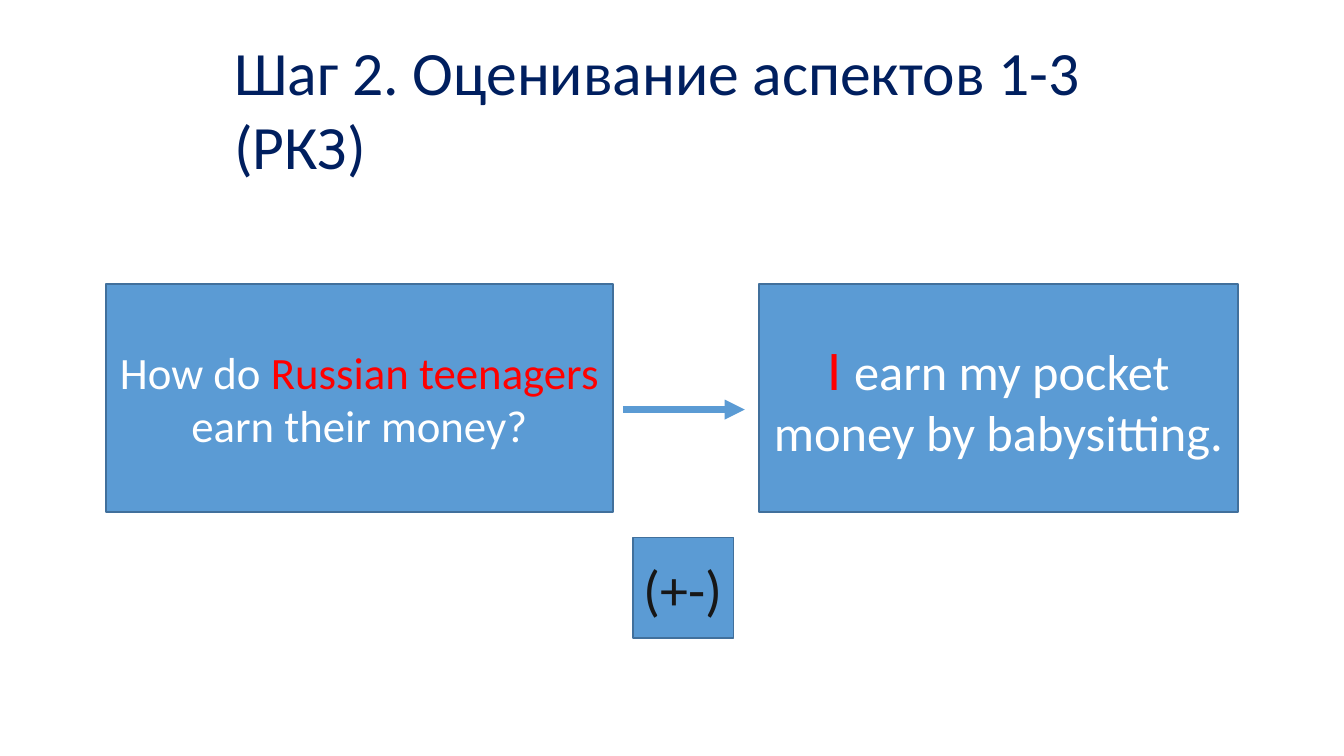
from lxml import etree
from pptx import Presentation
from pptx.dml.color import RGBColor
from pptx.enum.shapes import MSO_CONNECTOR, MSO_SHAPE
from pptx.enum.text import MSO_ANCHOR, MSO_AUTO_SIZE, PP_ALIGN
from pptx.oxml.ns import qn
from pptx.util import Cm, Pt

NAVY = RGBColor(0x00, 0x1F, 0x5F)
BLUE = RGBColor(0x5B, 0x9B, 0xD4)
BORDER = RGBColor(0x41, 0x70, 0x9C)
WHITE = RGBColor(0xFF, 0xFF, 0xFF)
RED = RGBColor(0xFF, 0x00, 0x00)
BLACK = RGBColor(0x17, 0x17, 0x17)

RECTANGLE = MSO_SHAPE.RECTANGLE
STRAIGHT = MSO_CONNECTOR.STRAIGHT
TOP, MIDDLE = MSO_ANCHOR.TOP, MSO_ANCHOR.MIDDLE
LEFT, CENTER = PP_ALIGN.LEFT, PP_ALIGN.CENTER
NO_FIT = MSO_AUTO_SIZE.NONE

QUESTION = [("How do ", 32, WHITE), ("Russian teenagers ", 32, RED),
            ("earn their money?", 32, WHITE)]
ANSWER = [("I ", 40, RED), ("earn my pocket money by babysitting.", 36, WHITE)]
MARK = [("(+-)", 40, BLACK)]
HEADING = [("Шаг 2. Оценивание аспектов 1-3 (РКЗ)", 44, NAVY)]


def apply(target, values):
    for name, value in values.items():
        setattr(target, name, value)


def write(frame, pieces, align, anchor, indent=0):
    """Fill a text frame with one paragraph of coloured pieces."""
    apply(frame, {"word_wrap": True, "auto_size": NO_FIT,
                  "vertical_anchor": anchor, "margin_left": Cm(indent),
                  "margin_right": 0, "margin_top": 0, "margin_bottom": 0})
    paragraph = frame.paragraphs[0]
    apply(paragraph, {"alignment": align, "line_spacing": 1.0})
    for text, size, color in pieces:
        run = paragraph.add_run()
        run.text = text
        apply(run.font, {"name": "Calibri", "size": Pt(size)})
        run.font.color.rgb = color


def add_heading(slide, left, top, width, height):
    heading = slide.shapes.title
    apply(heading, {"left": Cm(left), "top": Cm(top),
                    "width": Cm(width), "height": Cm(height)})
    write(heading.text_frame, HEADING, LEFT, TOP, indent=2.72)


def add_card(slide, left, top, width, height, pieces):
    card = slide.shapes.add_shape(
        RECTANGLE, Cm(left), Cm(top), Cm(width), Cm(height))
    card.shadow.inherit = False
    card.fill.solid()
    card.fill.fore_color.rgb = BLUE
    card.line.color.rgb = BORDER
    card.line.width = Pt(0.96)
    write(card.text_frame, pieces, CENTER, MIDDLE)


def add_arrow(slide, start, end, y):
    arrow = slide.shapes.add_connector(
        STRAIGHT, Cm(start), Cm(y), Cm(end), Cm(y))
    arrow.line.color.rgb = BLUE
    arrow.line.width = Pt(4.8)
    # Arrowhead, and no shadow
    etree.SubElement(arrow.line._get_or_add_ln(), qn("a:tailEnd"),
                     type="triangle", w="med", len="med")
    etree.SubElement(arrow._element.spPr, qn("a:effectLst"))


def add_comparison(slide, left, top, width, height):
    """Question and answer side by side, with the mark below the gap."""
    card_height, question_width, answer_width, mark_size = 5.74, 12.78, 12.07, 2.54
    gap_start = left + question_width
    gap_end = left + width - answer_width
    gap_middle = (gap_start + gap_end) / 2

    add_card(slide, left, top, question_width, card_height, QUESTION)
    add_card(slide, gap_end, top, answer_width, card_height, ANSWER)
    add_card(slide, gap_middle - mark_size / 2 - 0.07, top + height - mark_size,
             mark_size, mark_size, MARK)
    add_arrow(slide, gap_start + 0.25, gap_end - 0.36, top + 3.16)


def main():
    deck = Presentation()
    apply(deck, {"slide_width": Cm(33.87), "slide_height": Cm(19.05)})
    slide = deck.slides.add_slide(deck.slide_layouts[5])  # title only
    add_heading(slide, 3.18, 0.86, 27.5, 1.93)
    add_comparison(slide, 2.67, 7.16, 28.53, 8.92)
    deck.save("out.pptx")


if __name__ == "__main__":
    main()
